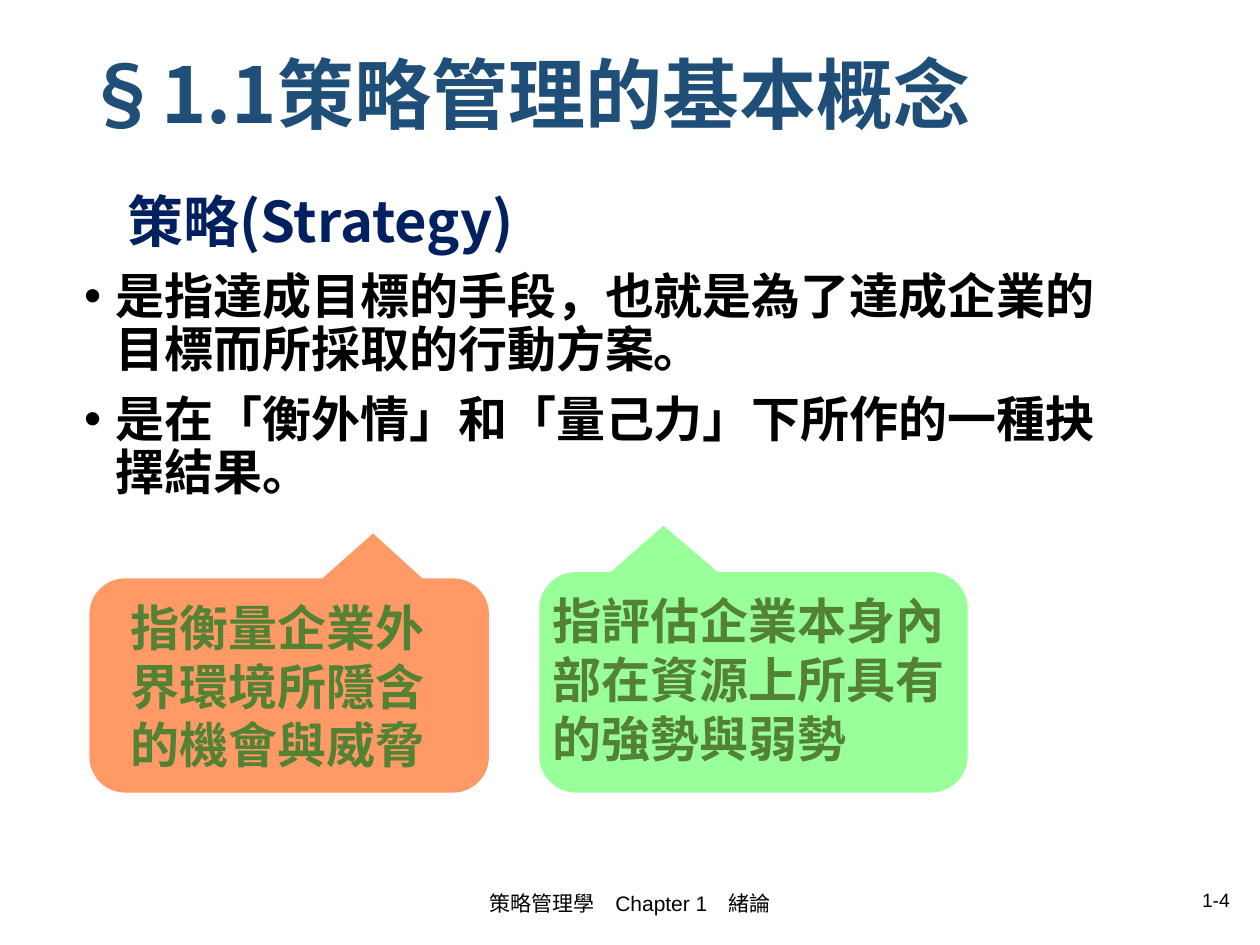
import pptx
import pptx.util
import pptx.dml.color
import pptx.enum.shapes
import pptx.enum.text
import pptx.oxml.ns
from dataclasses import dataclass
from lxml import etree

Inches = pptx.util.Inches
Pt = pptx.util.Pt
Align = pptx.enum.text.PP_ALIGN
Anchor = pptx.enum.text.MSO_ANCHOR


@dataclass(frozen=True)
class Theme:
    cjk: str = "Noto Sans CJK SC"
    latin: str = "Arial"
    title: str = "1F4E79"
    heading: str = "002060"
    ink: str = "000000"
    note: str = "548235"
    orange: str = "FF9966"
    green: str = "99FF99"
    title_size: int = 44
    heading_size: int = 32
    body_size: int = 28
    footer_size: int = 12
    number_size: int = 11


THEME = Theme()


def rgb(value):
    return pptx.dml.color.RGBColor.from_string(value)


def add_frame(page, box, anchor=Anchor.TOP):
    frame = page.shapes.add_textbox(*map(Inches, box)).text_frame
    frame.word_wrap = True
    frame.vertical_anchor = anchor
    return frame


def add_span(para, text, size, color, font=THEME.cjk, bold=True):
    span = para.add_run()
    span.text = text
    span.font.size = Pt(size)
    span.font.bold = bold
    span.font.name = font
    span.font.color.rgb = rgb(color)
    # East Asian glyphs take their own typeface entry
    east_asian = etree.SubElement(span.font._element, pptx.oxml.ns.qn("a:ea"))
    east_asian.set("typeface", THEME.cjk)


def set_indent(para, left, hanging=0, bullet=None):
    props = para._p.get_or_add_pPr()
    props.set("marL", str(Inches(left)))
    props.set("indent", str(-Inches(hanging)))
    if bullet:
        font = etree.SubElement(props, pptx.oxml.ns.qn("a:buFont"))
        font.set("typeface", THEME.latin)
        mark = etree.SubElement(props, pptx.oxml.ns.qn("a:buChar"))
        mark.set("char", bullet)


def add_title(page, box, text):
    para = add_frame(page, box, Anchor.MIDDLE).paragraphs[0]
    para.line_spacing = 0.9
    add_span(para, text, THEME.title_size, THEME.title)


def add_definition(page, box, heading, points):
    frame = add_frame(page, box)
    para = frame.paragraphs[0]
    set_indent(para, 0.34)
    para.line_spacing = 0.9
    add_span(para, heading, THEME.heading_size, THEME.heading)
    for point in points:
        para = frame.add_paragraph()
        set_indent(para, 0.25, 0.25, "•")
        para.line_spacing = 0.9
        para.space_before = Pt(10)
        add_span(para, point, THEME.body_size, THEME.ink)


def add_callout(page, box, tail, fill, text_box, text):
    kind = pptx.enum.shapes.MSO_SHAPE.ROUNDED_RECTANGULAR_CALLOUT
    bubble = page.shapes.add_shape(kind, *map(Inches, box))
    bubble.rotation = 180
    bubble.adjustments[0], bubble.adjustments[1] = tail
    bubble.shadow.inherit = False
    bubble.fill.solid()
    bubble.fill.fore_color.rgb = rgb(fill)
    bubble.line.fill.background()
    para = add_frame(page, text_box).paragraphs[0]
    add_span(para, text, THEME.body_size, THEME.note)


def add_footer(page, box, text, size, align):
    para = add_frame(page, box, Anchor.MIDDLE).paragraphs[0]
    para.alignment = align
    add_span(para, text, size, THEME.ink, THEME.latin, False)


def main():
    deck = pptx.Presentation()
    deck.slide_width, deck.slide_height = Inches(10), Inches(7.5)
    page = deck.slides.add_slide(deck.slide_layouts[6])

    # Title and definition
    add_title(page, (0.57, 0.37, 8.31, 0.82), "§1.1策略管理的基本概念")
    add_definition(page, (0.57, 1.49, 8.31, 4.95), "策略(Strategy)", [
        "是指達成目標的手段，也就是為了達成企業的目標而所採取的行動方案。",
        "是在「衡外情」和「量己力」下所作的一種抉擇結果。",
    ])

    # Callouts pointing up at the quoted terms
    add_callout(page, (0.71, 4.59, 3.17, 1.7), (-0.21, 0.71), THEME.orange,
                (0.94, 4.69, 2.71, 1.52), "指衡量企業外界環境所隱含的機會與威脅")
    add_callout(page, (4.28, 4.54, 3.4, 1.75), (0.21, 0.71), THEME.green,
                (4.29, 4.64, 3.52, 1.52), "指評估企業本身內部在資源上所具有的強勢與弱勢")

    # Footer and page number
    add_footer(page, (3.31, 6.97, 3.38, 0.4), "策略管理學　Chapter 1　緒論",
               THEME.footer_size, Align.CENTER)
    add_footer(page, (7.06, 6.99, 2.8, 0.3), "1-4",
               THEME.number_size, Align.RIGHT)

    deck.save("out.pptx")


if __name__ == "__main__":
    main()
